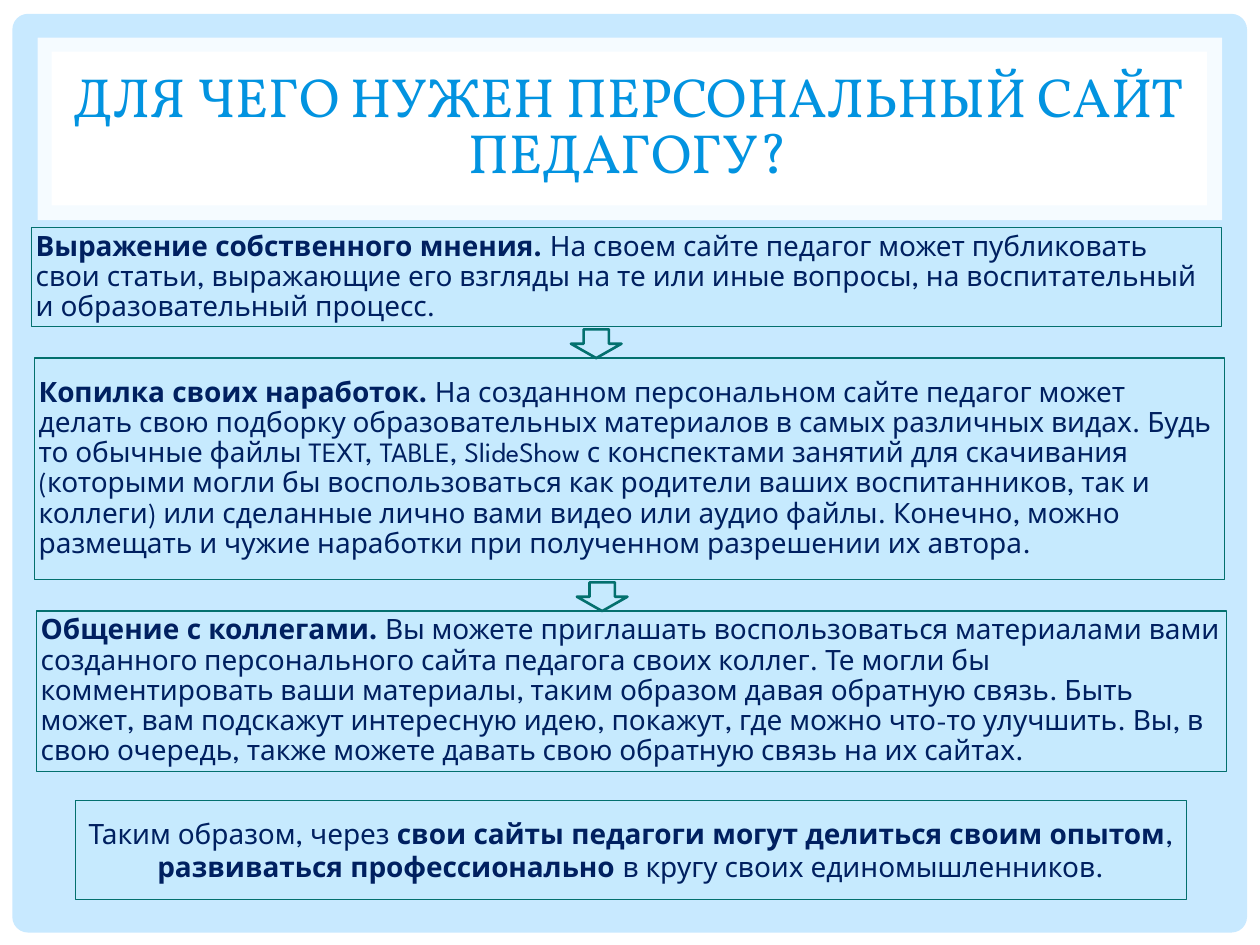
from lxml.etree import SubElement
from pptx import Presentation
from pptx.dml.color import RGBColor
from pptx.enum.shapes import MSO_SHAPE
from pptx.enum.text import MSO_ANCHOR, PP_ALIGN
from pptx.oxml.ns import qn
from pptx.util import Cm, Pt

PALE, PANEL, WHITE = "C8E9FF", "C6EAFE", "FFFFFF"
TEAL, NAVY, BLUE = "03706E", "002060", "0293E0"
BODY_FONT, TITLE_FONT = "League Spartan", "Vollkorn"

TITLE = "ДЛЯ ЧЕГО НУЖЕН ПЕРСОНАЛЬНЫЙ САЙТ ПЕДАГОГУ?"

# Left, top, height in cm; heading; text
REASONS = [
    (0.64, 4.59, 2.0, "Выражение собственного мнения. ",
     "На своем сайте педагог может публиковать свои статьи, выражающие его "
     "взгляды на те или иные вопросы, на воспитательный и образовательный процесс."),
    (0.7, 7.22, 4.46, "Копилка своих наработок. ",
     "На созданном персональном сайте педагог может делать свою подборку "
     "образовательных материалов в самых различных видах. Будь то обычные файлы "
     "TEXT, TABLE, SlideShow с конспектами занятий для скачивания (которыми могли бы "
     "воспользоваться как родители ваших воспитанников, так и коллеги) или сделанные "
     "лично вами видео или аудио файлы. Конечно, можно размещать и чужие наработки "
     "при полученном разрешении их автора."),
    (0.74, 12.32, 3.23, "Общение с коллегами. ",
     "Вы можете приглашать воспользоваться материалами вами созданного персонального "
     "сайта педагога своих коллег. Те могли бы комментировать ваши материалы, таким "
     "образом давая обратную связь. Быть может, вам подскажут интересную идею, "
     "покажут, где можно что-то улучшить. Вы, в свою очередь, также можете давать "
     "свою обратную связь на их сайтах."),
]
REASON_WIDTH = 23.98
ARROW_WIDTH, ARROW_HEIGHT = 1.02, 0.58
ARROW_LEFTS = [11.51, 11.63]

CONCLUSION = [
    ("Таким образом, через ", False),
    ("свои сайты педагоги могут делиться своим опытом", True),
    (", ", False),
    ("развиваться профессионально ", True),
    ("в кругу своих единомышленников.", False),
]


def color(value):
    return RGBColor.from_string(value)


def add_box(kind, left, top, width, height, fill=None, line_width=None):
    shape = slide.shapes.add_shape(kind, Cm(left), Cm(top), Cm(width), Cm(height))
    shape.shadow.inherit = False
    if fill:
        shape.fill.solid()
        shape.fill.fore_color.rgb = color(fill)
    else:
        shape.fill.background()
    if line_width:
        shape.line.color.rgb = color(TEAL)
        shape.line.width = Pt(line_width)
    else:
        shape.line.fill.background()
    return shape


def write(shape, runs, align, font_name, size, text_color, inset, spacing):
    """Fill the shape with one paragraph made of (text, bold) runs."""
    frame = shape.text_frame
    frame.word_wrap = True
    frame.vertical_anchor = MSO_ANCHOR.MIDDLE
    frame.margin_left = frame.margin_right = Cm(inset)
    frame.margin_top = frame.margin_bottom = Cm(0.08)
    paragraph = frame.paragraphs[0]
    paragraph.alignment = align
    paragraph.line_spacing = spacing
    paragraph.font.name = font_name
    paragraph.font.size = Pt(size)
    paragraph.font.color.rgb = color(text_color)
    for text, bold in runs:
        run = paragraph.add_run()
        run.text = text
        run.font.bold = bold


presentation = Presentation()
presentation.slide_width, presentation.slide_height = Cm(25.4), Cm(19.05)
slide = presentation.slides.add_slide(presentation.slide_layouts[6])
slide.background.fill.solid()
slide.background.fill.fore_color.rgb = color(WHITE)

backdrop = add_box(MSO_SHAPE.ROUNDED_RECTANGLE, 0.25, 0.28, 24.89, 18.52, PALE)
backdrop.adjustments[0] = 0.017
title_frame = add_box(MSO_SHAPE.RECTANGLE, 0.76, 0.76, 23.88, 3.68, WHITE)
frame_color = title_frame.fill._xPr.find(".//" + qn("a:srgbClr"))
SubElement(frame_color, qn("a:alpha"), val="83000")
add_box(MSO_SHAPE.RECTANGLE, 1.04, 1.04, 23.29, 3.1, WHITE)
title = add_box(MSO_SHAPE.RECTANGLE, 1.19, 1.14, 22.94, 2.9)
write(title, [(TITLE, False)], PP_ALIGN.CENTER, TITLE_FONT, 31.5, BLUE, 0.15, 0.86)

for left, top, height, heading, text in REASONS:
    panel = add_box(MSO_SHAPE.RECTANGLE, left, top, REASON_WIDTH, height, PANEL, 0.75)
    write(panel, [(heading, True), (text, False)], PP_ALIGN.LEFT,
          BODY_FONT, 16, NAVY, 0.08, 0.9)

conclusion = add_box(MSO_SHAPE.RECTANGLE, 1.52, 16.13, 22.4, 2.0, PANEL, 0.25)
write(conclusion, CONCLUSION, PP_ALIGN.CENTER, BODY_FONT, 16, NAVY, 0.25, 1.0)

# Each arrow sits in the gap above the next panel
for arrow_left, (_, next_top, *_) in zip(ARROW_LEFTS, REASONS[1:]):
    add_box(MSO_SHAPE.DOWN_ARROW, arrow_left, next_top - ARROW_HEIGHT,
            ARROW_WIDTH, ARROW_HEIGHT, PANEL, 1.5)

presentation.save("out.pptx")
